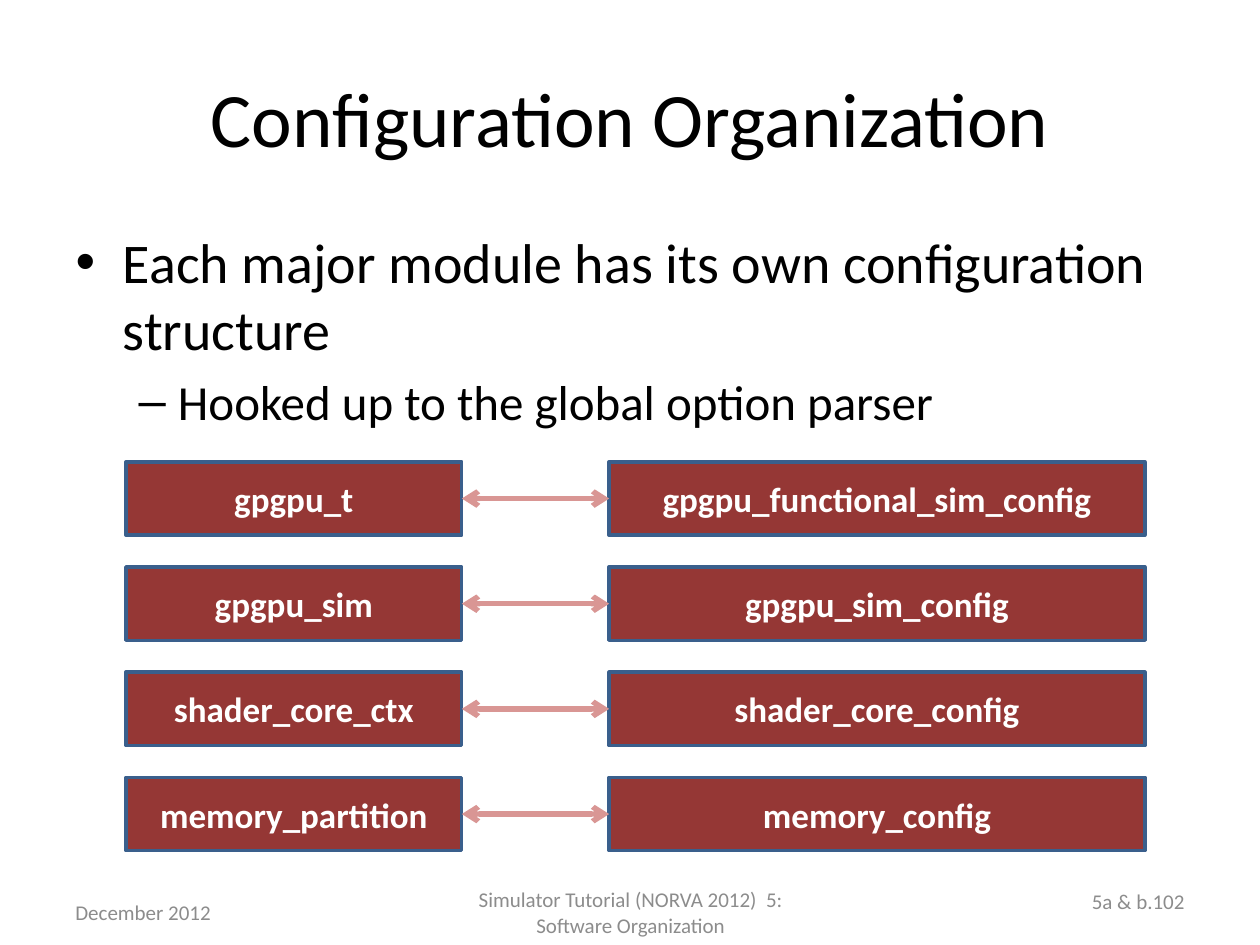
from lxml.etree import SubElement
from pptx import Presentation
from pptx.dml.color import RGBColor
from pptx.enum.shapes import MSO_CONNECTOR, MSO_SHAPE
from pptx.enum.text import MSO_ANCHOR, MSO_AUTO_SIZE, PP_ALIGN
from pptx.oxml.ns import qn
from pptx.util import Cm, Pt

FONT = "Calibri"
BLACK, WHITE, GREY = "000000", "FFFFFF", "8C8C8C"
BOX_FILL, BOX_LINE, ARROW = "953735", "3A5F8C", "D99694"

# Module and its configuration structure
PAIRS = [
    ("gpgpu_t", "gpgpu_functional_sim_config"),
    ("gpgpu_sim", "gpgpu_sim_config"),
    ("shader_core_ctx", "shader_core_config"),
    ("memory_partition", "memory_config"),
]
BULLETS = [
    ("Each major module has its own configuration structure", 0, 32),
    ("Hooked up to the global option parser", 1, 28),
]

# Grid of the pairs, in cm
MODULE_LEFT, MODULE_WIDTH = 2.54, 6.77
CONFIG_LEFT, CONFIG_WIDTH = 12.28, 10.8
ROW_TOP, ROW_PITCH, BOX_HEIGHT = 9.31, 2.12, 1.48


def rgb(value):
    return RGBColor.from_string(value)


def style(p, size, color, align=None, bold=None):
    p.font.name = FONT
    p.font.size = Pt(size)
    p.font.color.rgb = rgb(color)
    p.font.bold = bold
    p.alignment = align


def place(sp, left, top, width, height):
    sp.left, sp.top, sp.width, sp.height = map(Cm, (left, top, width, height))


def fill_title(sp, text):
    place(sp, 1.27, 0.76, 22.86, 3.18)
    tf = sp.text_frame
    tf.text = text
    tf.vertical_anchor = MSO_ANCHOR.MIDDLE
    style(tf.paragraphs[0], 44, BLACK, PP_ALIGN.CENTER)


def fill_bullets(sp, bullets):
    place(sp, 1.27, 4.45, 22.86, 4.45)
    tf = sp.text_frame
    tf.text = "\n".join(text for text, _, _ in bullets)
    tf.auto_size = MSO_AUTO_SIZE.NONE
    for p, (_, level, size) in zip(tf.paragraphs, bullets):
        p.level = level
        style(p, size, BLACK)


def add_footer(slide, text, align, left, top, width, height):
    sp = slide.shapes.add_textbox(Cm(left), Cm(top), Cm(width), Cm(height))
    tf = sp.text_frame
    tf.word_wrap = True
    tf.vertical_anchor = MSO_ANCHOR.MIDDLE
    tf.text = text
    style(tf.paragraphs[0], 12, GREY, align)


def add_box(slide, text, left, top, width):
    sp = slide.shapes.add_shape(
        MSO_SHAPE.RECTANGLE, Cm(left), Cm(top), Cm(width), Cm(BOX_HEIGHT))
    sp.shadow.inherit = False
    sp.fill.solid()
    sp.fill.fore_color.rgb = rgb(BOX_FILL)
    sp.line.color.rgb = rgb(BOX_LINE)
    sp.line.width = Pt(2)
    tf = sp.text_frame
    tf.vertical_anchor = MSO_ANCHOR.MIDDLE
    tf.text = text
    style(tf.paragraphs[0], 20, WHITE, PP_ALIGN.CENTER, bold=True)
    return sp


def add_double_arrow(slide, start, end):
    cxn = slide.shapes.add_connector(MSO_CONNECTOR.STRAIGHT, 0, 0, 0, 0)
    cxn.begin_connect(start, 3)  # right side
    cxn.end_connect(end, 1)  # left side
    cxn.line.color.rgb = rgb(ARROW)
    cxn.line.width = Pt(3)
    ln = cxn._element.spPr.find(qn("a:ln"))
    for tag in ("a:headEnd", "a:tailEnd"):
        SubElement(ln, qn(tag), type="arrow")
    SubElement(cxn._element.spPr, qn("a:effectLst"))


def main():
    prs = Presentation()
    prs.slide_width, prs.slide_height = Cm(25.4), Cm(19.05)
    slide = prs.slides.add_slide(prs.slide_layouts[1])

    # Title and list
    fill_title(slide.shapes.title, "Configuration Organization")
    fill_bullets(slide.placeholders[1], BULLETS)

    # Modules linked to their configurations
    for row, (module, config) in enumerate(PAIRS):
        top = ROW_TOP + row * ROW_PITCH
        module_box = add_box(slide, module, MODULE_LEFT, top, MODULE_WIDTH)
        config_box = add_box(slide, config, CONFIG_LEFT, top, CONFIG_WIDTH)
        add_double_arrow(slide, module_box, config_box)

    # Footer
    add_footer(slide, "December 2012", PP_ALIGN.LEFT, 1.27, 17.73, 5.92, 1.32)
    add_footer(slide, "Simulator Tutorial (NORVA 2012)  5: Software Organization",
               PP_ALIGN.CENTER, 8.69, 17.73, 8.05, 1.32)
    add_footer(slide, "5a & b.102", PP_ALIGN.RIGHT, 18.21, 17.65, 5.92, 1.02)

    prs.save("out.pptx")


if __name__ == "__main__":
    main()
